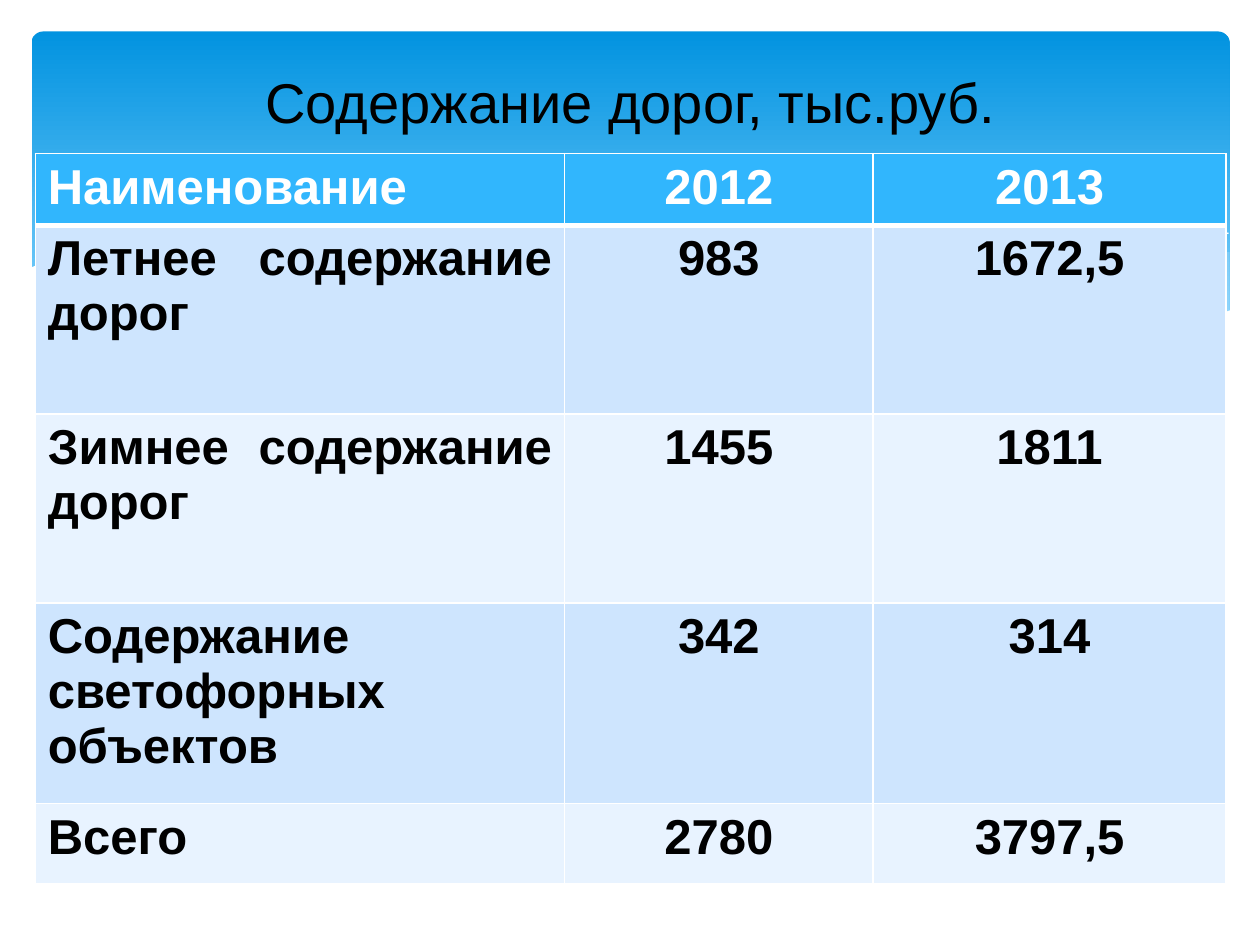
"""Build a slide with a table of road maintenance costs over a wave banner."""
from lxml import etree
from pptx import Presentation
from pptx.dml.color import RGBColor
from pptx.enum.shapes import MSO_SHAPE
from pptx.enum.text import MSO_ANCHOR, PP_ALIGN
from pptx.oxml.ns import qn
from pptx.util import Inches, Pt

ROUNDED = MSO_SHAPE.ROUNDED_RECTANGLE
MIDDLE = MSO_ANCHOR.MIDDLE
LEFT, CENTER, JUSTIFY = PP_ALIGN.LEFT, PP_ALIGN.CENTER, PP_ALIGN.JUSTIFY

COLORS = {"top": "0293E0", "bottom": "83D3FE", "wave": "C6E7FC", "white": "FFFFFF",
          "black": "000000", "header": "31B6FD", "odd": "CEE5FE", "even": "E8F3FF"}
TITLE = "Содержание дорог, тыс.руб."
ROWS = [
    ("Наименование", "2012", "2013"),
    ("Летнее содержание дорог", "983", "1672,5"),
    ("Зимнее содержание дорог", "1455", "1811"),
    ("Содержание светофорных объектов", "342", "314"),
    ("Всего", "2780", "3797,5"),
]
COLUMN_WIDTHS = [4.2, 2.45, 2.8]
ROW_HEIGHTS = [0.53, 1.5, 1.5, 1.59, 0.64]
WAVES = [
    {"fill": "wave", "alpha": 29, "points": [
        (9.75, 2), (9.35, 2.07), (8.61, 2.23), (7.79, 2.42), (7.06, 2.57), (6.61, 2.65),
        (7.05, 2.71), (7.57, 2.76), (8.03, 2.78), (8.54, 2.76), (8.97, 2.7),
        (9.35, 2.62), (9.63, 2.52), (9.76, 2.47), (9.76, 2)]},
    {"fill": "wave", "alpha": 40, "points": [
        (8.93, 2.73), (8.37, 2.65), (7.75, 2.54), (7.06, 2.4), (6.29, 2.22), (5.69, 2.08),
        (5.14, 1.98), (4.65, 1.91), (4.2, 1.87), (3.61, 1.85), (3.13, 1.88), (2.86, 1.91),
        (3.42, 1.99), (4.04, 2.11), (4.91, 2.32), (5.66, 2.48), (6.34, 2.61),
        (6.95, 2.7), (7.48, 2.76), (8.07, 2.78), (8.57, 2.77)]},
    {"line": "white", "points": [
        (3.09, 1.95), (3.44, 1.9), (3.87, 1.87), (4.33, 1.87), (4.89, 1.9), (5.56, 1.97),
        (6.36, 2.08), (6.95, 2.19), (7.6, 2.33), (8.31, 2.51), (9.07, 2.72)]},
    {"line": "white", "points": [
        (6.13, 2.57), (6.72, 2.41), (7.48, 2.23), (8.06, 2.1), (8.66, 1.99),
        (9.1, 1.92), (9.51, 1.87), (9.75, 1.85)]},
    {"fill": "white", "points": [
        (9.77, 2.46), (9.5, 2.56), (9.1, 2.67), (8.63, 2.74), (8.09, 2.77), (7.44, 2.74),
        (6.68, 2.65), (5.79, 2.5), (5.03, 2.33), (4.18, 2.13), (3.4, 1.97), (2.71, 1.88),
        (2.11, 1.84), (1.61, 1.84), (1.19, 1.87), (0.85, 1.93), (0.52, 2.01),
        (0.23, 2.13), (0.23, 3.29), (9.77, 3.29)]},
]


def color(name):
    return RGBColor.from_string(COLORS[name])


def write(frame, text, align, **font):
    para = frame.paragraphs[0]
    para.alignment = align
    span = para.add_run()
    span.text = text
    tint = font.pop("color")
    for key, value in {"name": "Arial", **font}.items():
        setattr(span.font, key, value)
    span.font.color.rgb = color(tint)


def add_banner(page):
    banner = page.shapes.add_shape(
        ROUNDED, Inches(0.25), Inches(0.25), Inches(9.51), Inches(2.7))
    banner.adjustments[0] = 0.034
    banner.shadow.inherit = False
    banner.line.fill.background()
    banner.fill.gradient()
    banner.fill.gradient_angle = 270
    for stop, name, position in zip(
            banner.fill.gradient_stops, ("top", "bottom"), (0, 0.9)):
        stop.color.rgb = color(name)
        stop.position = position


def add_wave(page, wave):
    points = [(Inches(x), Inches(y)) for x, y in wave["points"]]
    builder = page.shapes.build_freeform(*points[0])
    builder.add_line_segments(points[1:], close="fill" in wave)
    shape = builder.convert_to_shape()
    shape.shadow.inherit = False
    for part, name in ((shape.fill, "fill"), (shape.line.fill, "line")):
        if name in wave:
            part.solid()
            part.fore_color.rgb = color(wave[name])
        else:
            part.background()
    if "line" in wave:
        shape.line.width = Pt(0)
    if "alpha" in wave:
        tint = shape.fill._xPr.find(f"{qn('a:solidFill')}/{qn('a:srgbClr')}")
        etree.SubElement(tint, qn("a:alpha"), val=str(wave["alpha"] * 1000))


def add_borders(cell, bottom):
    properties = cell._tc.get_or_add_tcPr()
    sides = {"lnL": 1, "lnR": 1, "lnT": 1, "lnB": bottom}
    for index, (side, width) in enumerate(sides.items()):
        border = etree.Element(qn(f"a:{side}"), w=str(Pt(width)))
        fill = etree.SubElement(border, qn("a:solidFill"))
        etree.SubElement(fill, qn("a:srgbClr"), val=COLORS["white"])
        properties.insert(index, border)


def add_costs(page):
    table = page.shapes.add_table(
        len(ROWS), len(COLUMN_WIDTHS), Inches(0.28), Inches(1.22),
        Inches(sum(COLUMN_WIDTHS)), Inches(sum(ROW_HEIGHTS))).table
    for column, width in zip(table.columns, COLUMN_WIDTHS):
        column.width = Inches(width)
    for r, (row, height, texts) in enumerate(zip(table.rows, ROW_HEIGHTS, ROWS)):
        row.height = Inches(height)
        header = r == 0
        band = "header" if header else ("even", "odd")[r % 2]
        for c, (cell, text) in enumerate(zip(row.cells, texts)):
            align = CENTER if c else LEFT if header else JUSTIFY
            write(cell.text_frame, text, align, size=Pt(28), bold=True,
                  color="white" if header else "black")
            cell.fill.solid()
            cell.fill.fore_color.rgb = color(band)
            add_borders(cell, 3 if header else 1)
            if r == 1:
                cell._tc.tcPr.find(qn("a:lnT")).set("w", str(Pt(3)))


def main():
    deck = Presentation()
    deck.slide_width, deck.slide_height = Inches(10), Inches(7.5)
    page = deck.slides.add_slide(deck.slide_layouts[6])
    add_banner(page)
    for wave in WAVES:
        add_wave(page, wave)
    box = page.shapes.add_textbox(Inches(0.2), Inches(0.36), Inches(9.61), Inches(0.89))
    box.text_frame.word_wrap = True
    box.text_frame.vertical_anchor = MIDDLE
    write(box.text_frame, TITLE, CENTER, size=Pt(32), color="black")
    add_costs(page)
    deck.save("out.pptx")


if __name__ == "__main__":
    main()
